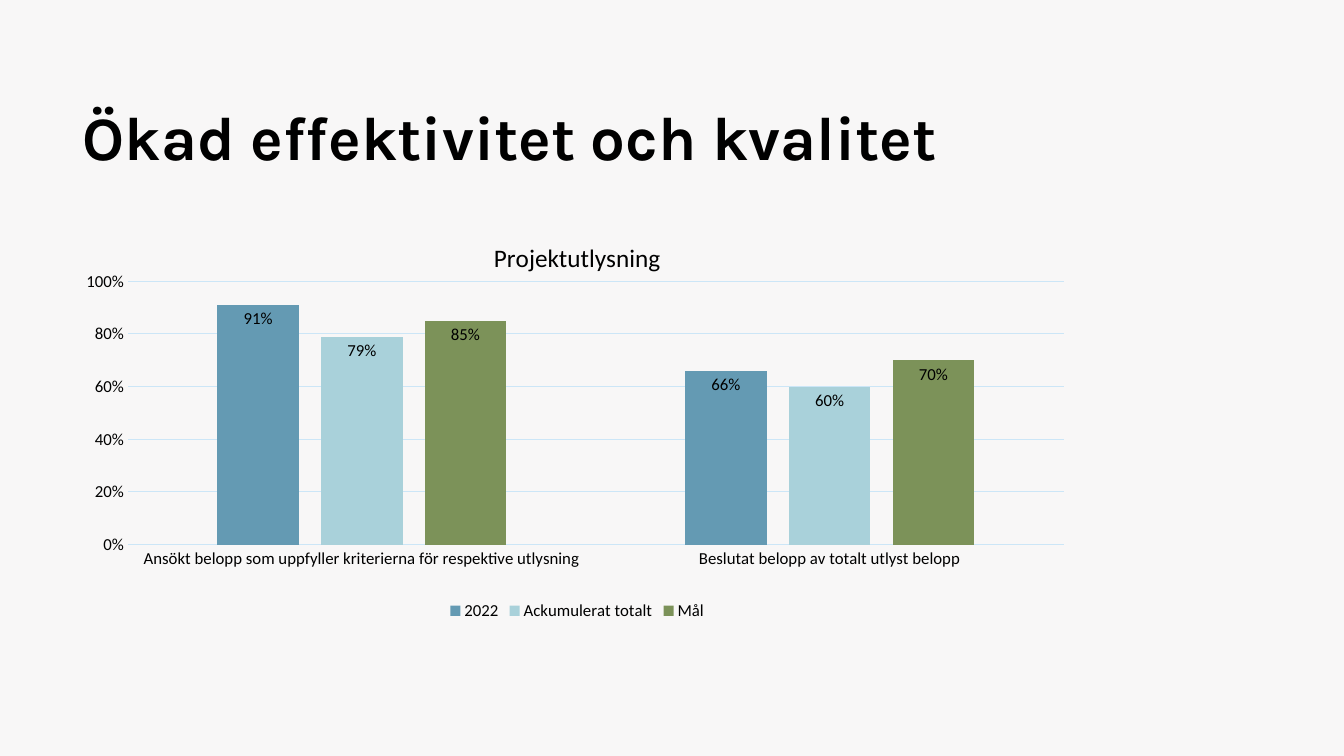
from dataclasses import dataclass

import pptx
import pptx.chart.data
import pptx.dml.color
import pptx.enum.chart
import pptx.enum.text
import pptx.oxml
import pptx.oxml.ns
import pptx.util

Pt = pptx.util.Pt


@dataclass(frozen=True)
class Theme:
    background: str = "F8F7F7"
    text: str = "000000"
    grid: str = "CCE6F7"
    series: tuple = ("649AB3", "A9D1DA", "7C9259")
    title_font: str = "Karla"
    chart_font: str = "Calibri"
    title_size: int = 44
    chart_title_size: int = 18
    label_size: int = 12


THEME = Theme()
CATEGORIES = (
    "Ansökt belopp som uppfyller kriterierna för respektive utlysning",
    "Beslutat belopp av totalt utlyst belopp",
)
SERIES = {
    "2022": (0.91, 0.66),
    "Ackumulerat totalt": (0.79, 0.6),
    "Mål": (0.85, 0.7),
}
PLOT_AREA = {"x": 0.053, "y": 0.146, "w": 0.931, "h": 0.655}


def rgb(value):
    return pptx.dml.color.RGBColor.from_string(value)


def style_font(font, name, size, bold=False):
    font.name = name
    font.size = Pt(size)
    font.bold = bold
    font.color.rgb = rgb(THEME.text)


def style_line(line):
    line.color.rgb = rgb(THEME.grid)
    line.width = Pt(0.75)


def add_title(slide, left, top, width, height):
    title = slide.shapes.title
    title.left, title.top, title.width, title.height = left, top, width, height
    frame = title.text_frame
    frame.word_wrap = True
    frame.auto_size = pptx.enum.text.MSO_AUTO_SIZE.NONE
    frame.vertical_anchor = pptx.enum.text.MSO_ANCHOR.MIDDLE
    paragraph = frame.paragraphs[0]
    paragraph.alignment = pptx.enum.text.PP_ALIGN.LEFT
    run = paragraph.add_run()
    run.text = "Ökad effektivitet och kvalitet"
    style_font(run.font, THEME.title_font, THEME.title_size, bold=True)


def set_plot_layout(chart):
    """Fix the inner plot area as fractions of the chart's box."""
    plot_area = chart.plots[0]._element.getparent()
    for old_layout in plot_area.findall(pptx.oxml.ns.qn("c:layout")):
        plot_area.remove(old_layout)
    modes = "".join(f'<c:{key}Mode val="edge"/>' for key in "xy")
    sizes = "".join(f'<c:{key} val="{value}"/>' for key, value in PLOT_AREA.items())
    layout = pptx.oxml.parse_xml(
        f'<c:layout {pptx.oxml.ns.nsdecls("c")}><c:manualLayout>'
        f'<c:layoutTarget val="inner"/>{modes}{sizes}</c:manualLayout></c:layout>'
    )
    plot_area.insert(0, layout)


def style_axes(chart):
    for axis in (chart.category_axis, chart.value_axis):
        axis.major_tick_mark = pptx.enum.chart.XL_TICK_MARK.NONE
        axis.minor_tick_mark = pptx.enum.chart.XL_TICK_MARK.NONE
        style_font(axis.tick_labels.font, THEME.chart_font, THEME.label_size)
    style_line(chart.category_axis.format.line)
    values = chart.value_axis
    values.minimum_scale, values.maximum_scale, values.major_unit = 0, 1, 0.2
    values.format.line.fill.background()
    style_line(values.major_gridlines.format.line)
    values.tick_labels.number_format = "0%"
    values.tick_labels.number_format_is_linked = False


def style_series(plot):
    plot.gap_width = 219
    plot.overlap = -27
    plot.vary_by_categories = False
    for series, color in zip(plot.series, THEME.series):
        series.format.fill.solid()
        series.format.fill.fore_color.rgb = rgb(color)
        series.invert_if_negative = False
        labels = series.data_labels
        labels.show_value = True
        labels.position = pptx.enum.chart.XL_LABEL_POSITION.INSIDE_END
        labels.number_format = "0%"
        labels.number_format_is_linked = False
        style_font(labels.font, THEME.chart_font, THEME.label_size)


def add_chart(slide, left, top, width, height):
    data = pptx.chart.data.CategoryChartData(number_format="0%")
    data.categories = CATEGORIES
    for name, values in SERIES.items():
        data.add_series(name, values)
    chart = slide.shapes.add_chart(
        pptx.enum.chart.XL_CHART_TYPE.COLUMN_CLUSTERED, left, top, width, height, data
    ).chart
    style_font(chart.font, THEME.chart_font, THEME.label_size)
    chart.has_title = True
    run = chart.chart_title.text_frame.paragraphs[0].add_run()
    run.text = "Projektutlysning"
    style_font(run.font, THEME.chart_font, THEME.chart_title_size)
    chart.chart_title.include_in_layout = False
    chart.has_legend = True
    chart.legend.position = pptx.enum.chart.XL_LEGEND_POSITION.BOTTOM
    chart.legend.include_in_layout = False
    style_font(chart.legend.font, THEME.chart_font, THEME.label_size)
    style_axes(chart)
    style_series(chart.plots[0])
    set_plot_layout(chart)


def main():
    presentation = pptx.Presentation()
    presentation.slide_width, presentation.slide_height = Pt(960), Pt(540)
    slide = presentation.slides.add_slide(presentation.slide_layouts.get_by_name("Title Only"))
    slide.background.fill.solid()
    slide.background.fill.fore_color.rgb = rgb(THEME.background)
    add_title(slide, Pt(52), Pt(44.5), Pt(718), Pt(104.5))
    add_chart(slide, Pt(53.3), Pt(159), Pt(718), Pt(287.3))
    presentation.save("out.pptx")


if __name__ == "__main__":
    main()
